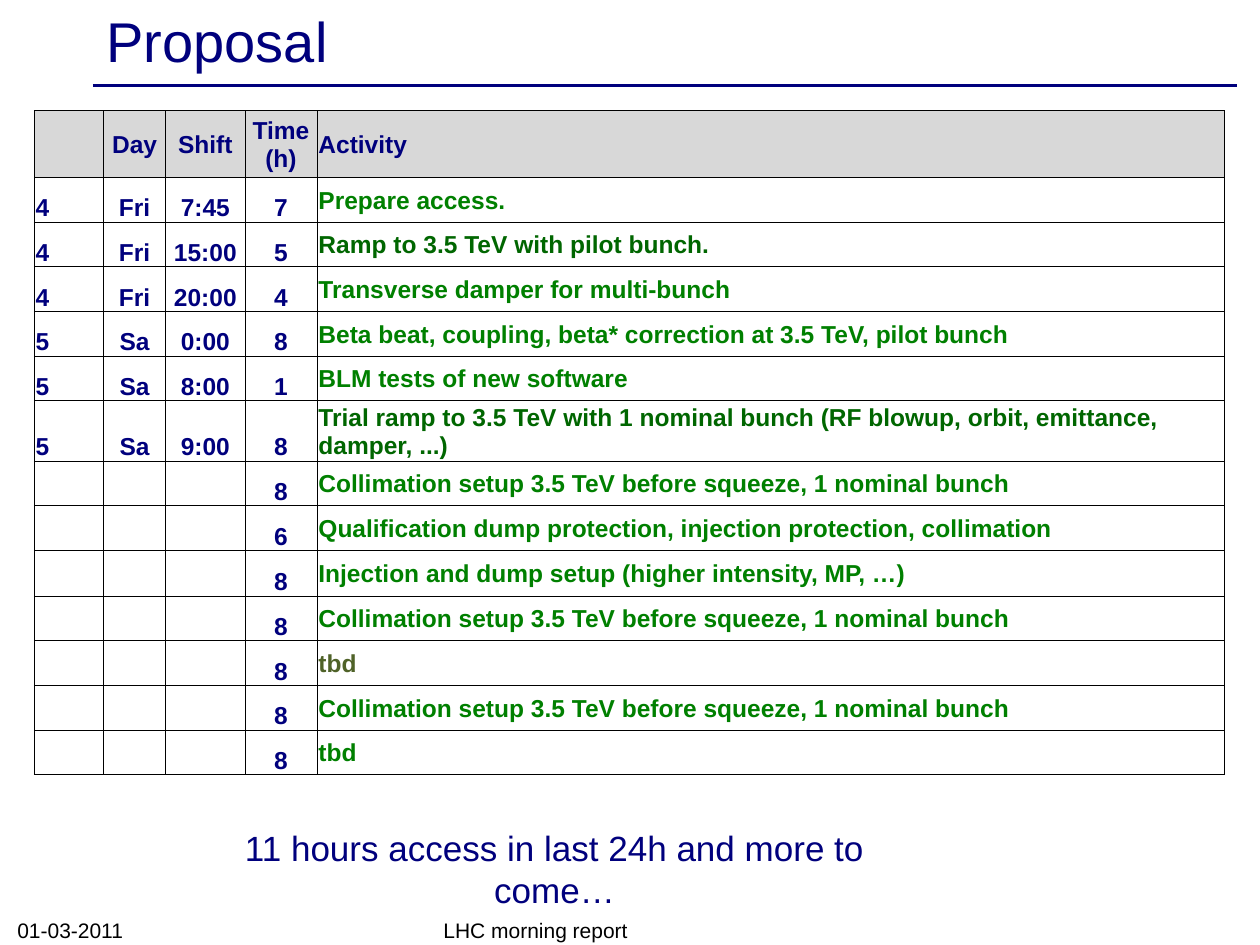
from lxml import etree
from pptx import Presentation
from pptx import util as u
from pptx.dml.color import RGBColor
from pptx.enum import shapes, text
from pptx.oxml import ns

FONT = "Arial"
COLORS = {
    "navy": "00007D",
    "black": "000000",
    "header": "D8D8D8",
    "green": "008000",
    "dark green": "006600",
    "olive": "4F6228",
}
COLUMN_WIDTHS = [1.4, 1.25, 1.6, 1.45, 18.3]
HEADER_HEIGHT = 1.35
ROW_HEIGHT = 0.9
TALL_ROWS = {6: 1.12, 9: 0.92}
HEADINGS = ["", "Day", "Shift", "Time (h)", "Activity"]
COLLIMATION = "Collimation setup 3.5 TeV before squeeze, 1 nominal bunch"
# date, day, shift, hours, activity, activity colour
ACTIVITIES = [
    ("4", "Fri", "7:45", "7", "Prepare access.", "green"),
    ("4", "Fri", "15:00", "5", "Ramp to 3.5 TeV with pilot bunch.", "dark green"),
    ("4", "Fri", "20:00", "4", "Transverse damper for multi-bunch", "green"),
    ("5", "Sa", "0:00", "8",
     "Beta beat, coupling, beta* correction at 3.5 TeV, pilot bunch", "green"),
    ("5", "Sa", "8:00", "1", "BLM tests of new software", "green"),
    ("5", "Sa", "9:00", "8",
     "Trial ramp to 3.5 TeV with 1 nominal bunch "
     "(RF blowup, orbit, emittance, damper, ...)", "dark green"),
    ("", "", "", "8", COLLIMATION, "green"),
    ("", "", "", "6",
     "Qualification dump protection, injection protection, collimation", "green"),
    ("", "", "", "8", "Injection and dump setup (higher intensity, MP, …)", "green"),
    ("", "", "", "8", COLLIMATION, "green"),
    ("", "", "", "8", "tbd", "olive"),
    ("", "", "", "8", COLLIMATION, "green"),
    ("", "", "", "8", "tbd", "green"),
]


def rgb(name):
    return RGBColor.from_string(COLORS[name])


def format_runs(paragraph, size, color, bold=False):
    for run in paragraph.runs:
        run.font.name = FONT
        run.font.size = u.Pt(size)
        run.font.bold = bold
        run.font.color.rgb = rgb(color)


def add_label(slide, words, box, size, color="navy", anchor=text.MSO_ANCHOR.TOP,
              align=text.PP_ALIGN.LEFT):
    """Add a wrapping text box; box is left, top, width, height in cm."""
    frame = slide.shapes.add_textbox(*[u.Cm(length) for length in box]).text_frame
    frame.word_wrap = True
    frame.vertical_anchor = anchor
    frame.text = words
    paragraph = frame.paragraphs[0]
    paragraph.alignment = align
    format_runs(paragraph, size, color)
    return frame


def add_title_rule(slide):
    rule = slide.shapes.add_connector(
        shapes.MSO_CONNECTOR.STRAIGHT, u.Cm(1.87), u.Cm(1.72), u.Cm(24.93), u.Cm(1.72))
    rule.line.color.rgb = rgb("navy")
    rule.line.width = u.Pt(2)
    etree.SubElement(rule._element.spPr, ns.qn("a:effectLst"))


def add_borders(cell):
    properties = cell._tc.get_or_add_tcPr()
    for side in ("lnL", "lnR", "lnT", "lnB"):
        line = etree.SubElement(properties, ns.qn(f"a:{side}"), w=str(u.Pt(0.5)))
        fill = etree.SubElement(line, ns.qn("a:solidFill"))
        etree.SubElement(fill, ns.qn("a:srgbClr"), val=COLORS["black"])


def fill_cell(cell, words, color, anchor, centered, header):
    cell.margin_left = cell.margin_right = cell.margin_top = u.Cm(0.03)
    cell.margin_bottom = u.Cm(0)
    cell.vertical_anchor = anchor
    add_borders(cell)
    if header:
        cell.fill.solid()
        cell.fill.fore_color.rgb = rgb("header")
    else:
        cell.fill.background()
    cell.text = words
    paragraph = cell.text_frame.paragraphs[0]
    paragraph.alignment = text.PP_ALIGN.CENTER if centered else text.PP_ALIGN.LEFT
    format_runs(paragraph, 14, color, bold=True)


def add_schedule(slide):
    heights = [HEADER_HEIGHT] + [
        TALL_ROWS.get(index, ROW_HEIGHT) for index in range(1, len(ACTIVITIES) + 1)]
    table = slide.shapes.add_table(
        len(heights), len(COLUMN_WIDTHS), u.Cm(0.69), u.Cm(2.23),
        u.Cm(sum(COLUMN_WIDTHS)), u.Cm(sum(heights))).table
    table.first_row = table.horz_banding = False
    for column, width in zip(table.columns, COLUMN_WIDTHS):
        column.width = u.Cm(width)
    for row, height in zip(table.rows, heights):
        row.height = u.Cm(height)

    activity_column = len(HEADINGS) - 1
    for row_index, (*words, color) in enumerate([(*HEADINGS, "navy"), *ACTIVITIES]):
        header = row_index == 0
        for column_index, word in enumerate(words):
            is_activity = column_index == activity_column
            middle = header or is_activity
            fill_cell(
                table.cell(row_index, column_index), word,
                color=color if is_activity else "navy",
                anchor=text.MSO_ANCHOR.MIDDLE if middle else text.MSO_ANCHOR.BOTTOM,
                centered=0 < column_index < activity_column,
                header=header)


def main():
    presentation = Presentation()
    presentation.slide_width = u.Cm(25.4)
    presentation.slide_height = u.Cm(19.05)
    slide = presentation.slides.add_slide(presentation.slide_layouts[6])

    add_title_rule(slide)
    add_label(slide, "Proposal", (1.9, 0.08, 22.86, 1.45), 32,
              anchor=text.MSO_ANCHOR.MIDDLE)
    add_label(slide, "01-03-2011", (0.1, 18.39, 5.92, 0.74), 12, "black",
              text.MSO_ANCHOR.BOTTOM)
    add_label(slide, "LHC morning report", (8.69, 18.42, 8.05, 0.71), 12, "black",
              text.MSO_ANCHOR.BOTTOM)
    add_schedule(slide)
    remark = add_label(slide, "11 hours access in last 24h and more to come…",
                       (4.7, 16.54, 15.6, 1.12), 20, align=text.PP_ALIGN.CENTER)
    remark.margin_left = u.Cm(0)
    remark.margin_right = u.Cm(2.64)

    presentation.save("out.pptx")


if __name__ == "__main__":
    main()
